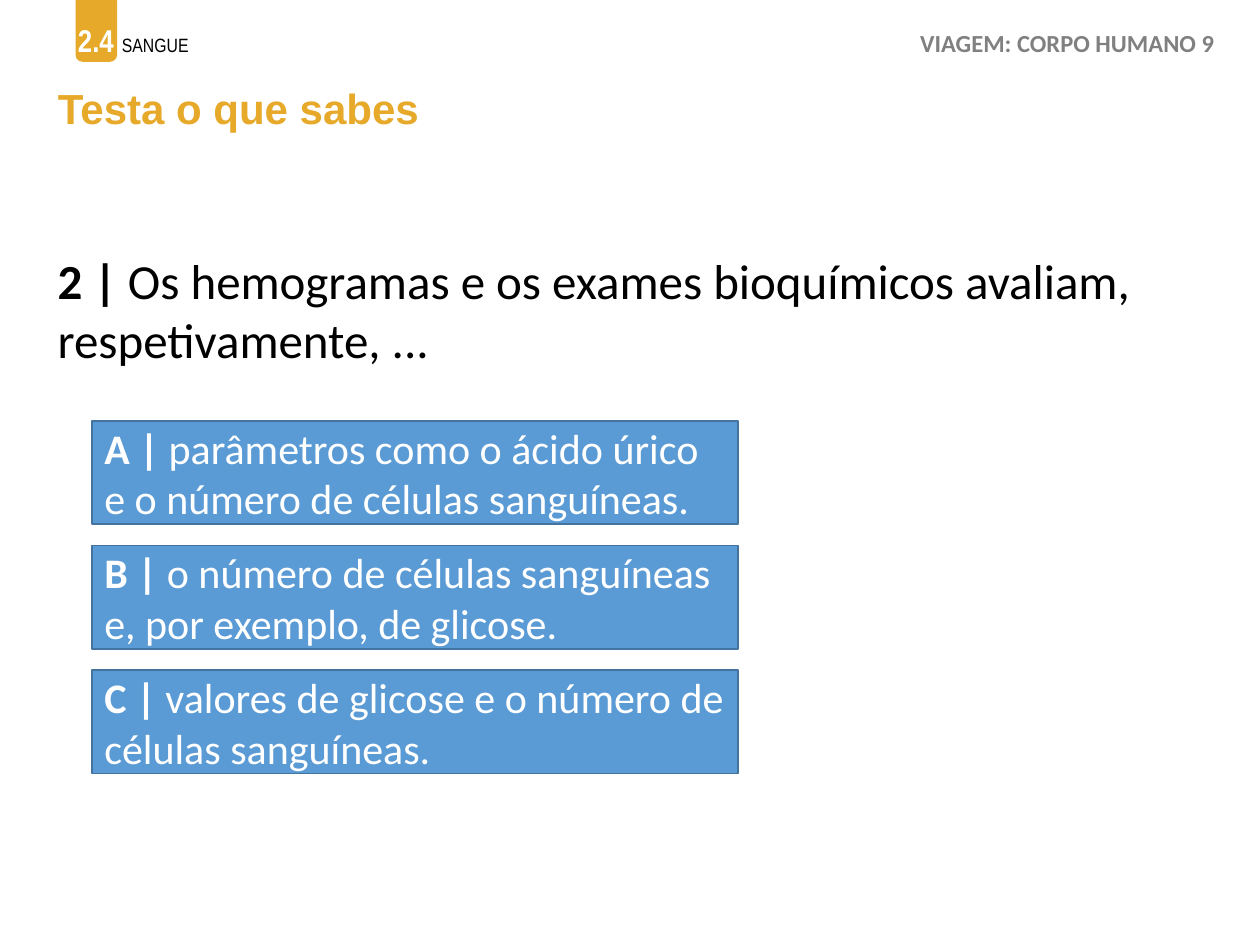
import pptx
import pptx.util
import pptx.dml.color
import pptx.enum.shapes
import pptx.enum.text

Inches = pptx.util.Inches
Pt = pptx.util.Pt
PP_ALIGN = pptx.enum.text.PP_ALIGN
MSO_ANCHOR = pptx.enum.text.MSO_ANCHOR
MSO_SHAPE = pptx.enum.shapes.MSO_SHAPE


def rgb(value):
    return pptx.dml.color.RGBColor.from_string(value)


def add_run(p, text, size, font, color, bold=False):
    r = p.add_run()
    r.text = text
    r.font.size = Pt(size)
    r.font.name = font
    r.font.color.rgb = rgb(color)
    r.font.bold = bold


prs = pptx.Presentation()
prs.slide_width = Inches(10)
prs.slide_height = Inches(7.5)
s = prs.slides.add_slide(prs.slide_layouts[5])

tab = s.shapes.add_shape(MSO_SHAPE.ROUNDED_RECTANGLE, Inches(0.6), Inches(-0.13), Inches(0.33), Inches(0.62))
tab.shadow.inherit = False
tab.fill.solid()
tab.fill.fore_color.rgb = rgb("E7A929")
tab.line.fill.background()

sp = s.shapes.add_textbox(Inches(0.52), Inches(0.09), Inches(7.15), Inches(0.44))
sp.text_frame.word_wrap = True
p = sp.text_frame.paragraphs[0]
add_run(p, "2.4", 18, "Arial Narrow", "FFFFFF", True)
add_run(p, " ", 20, "Arial Narrow", "AFC439", True)
add_run(p, "SANGUE", 11, "Arial Narrow", "000000")

sp = s.shapes.add_textbox(Inches(7.18), Inches(0.17), Inches(2.58), Inches(0.34))
sp.text_frame.word_wrap = True
p = sp.text_frame.paragraphs[0]
p.alignment = PP_ALIGN.CENTER
add_run(p, "VIAGEM: CORPO HUMANO 9", 14, "Calibri", "808080", True)

title = s.shapes.title
title.left, title.top, title.width, title.height = Inches(0.36), Inches(0.57), Inches(9.29), Inches(0.62)
title.text_frame.vertical_anchor = MSO_ANCHOR.MIDDLE
p = title.text_frame.paragraphs[0]
p.text = "Testa o que sabes"
p.alignment = PP_ALIGN.LEFT
p.line_spacing = 0.9
p.font.size = Pt(24)
p.font.name = "Arial"
p.font.bold = True
p.font.color.rgb = rgb("E7A929")

sp = s.shapes.add_textbox(Inches(0.36), Inches(1.94), Inches(9.29), Inches(1.04))
sp.text_frame.word_wrap = True
p = sp.text_frame.paragraphs[0]
add_run(p, "2 | ", 28, "Calibri", "000000", True)
add_run(p, "Os hemogramas e os exames bioquímicos avaliam, respetivamente, ...", 28, "Calibri", "000000")

answers = [
    ("A", "parâmetros como o ácido úrico e o número de células sanguíneas."),
    ("B", "o número de células sanguíneas e, por exemplo, de glicose."),
    ("C", "valores de glicose e o número de células sanguíneas."),
]
for i, (letter, answer) in enumerate(answers):
    sp = s.shapes.add_shape(MSO_SHAPE.RECTANGLE, Inches(0.73), Inches(3.34 + 0.99 * i), Inches(5.13), Inches(0.82))
    sp.shadow.inherit = False
    sp.fill.solid()
    sp.fill.fore_color.rgb = rgb("5B9BD5")
    sp.line.color.rgb = rgb("43739E")
    sp.line.width = Pt(1)
    tf = sp.text_frame
    tf.word_wrap = True
    tf.vertical_anchor = MSO_ANCHOR.MIDDLE
    p = tf.paragraphs[0]
    p.alignment = PP_ALIGN.LEFT
    add_run(p, f"{letter} | ", 24, "Calibri", "FFFFFF", True)
    add_run(p, answer, 24, "Calibri", "FFFFFF")

prs.save("out.pptx")
